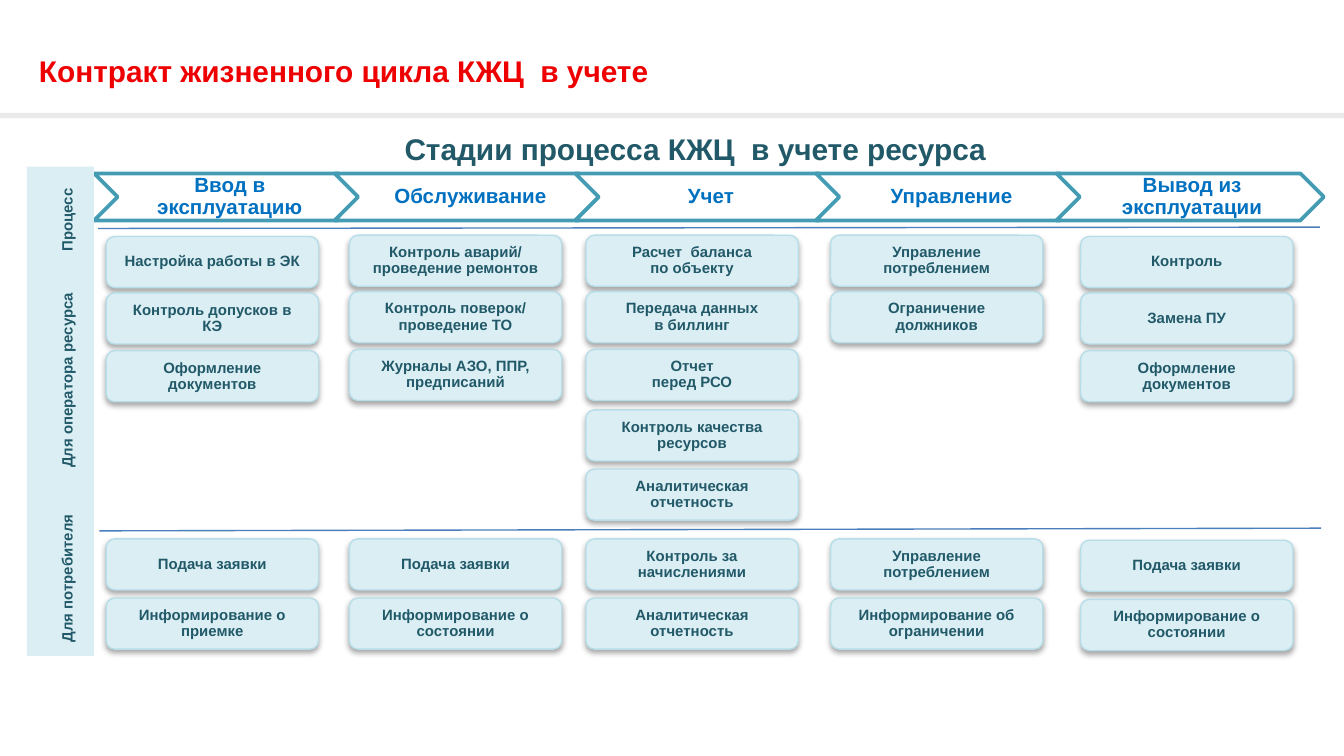
from dataclasses import dataclass

from lxml import etree
from pptx import Presentation
from pptx.dml.color import RGBColor
from pptx.enum.shapes import MSO_CONNECTOR, MSO_SHAPE
from pptx.enum.text import MSO_ANCHOR, MSO_AUTO_SIZE, PP_ALIGN
from pptx.oxml.ns import qn
from pptx.shapes.autoshape import Shape
from pptx.slide import Slide
from pptx.util import Inches, Pt

RECTANGLE = MSO_SHAPE.RECTANGLE
ROUNDED = MSO_SHAPE.ROUNDED_RECTANGLE
CHEVRON = MSO_SHAPE.CHEVRON
STRAIGHT = MSO_CONNECTOR.STRAIGHT
TOP, MIDDLE = MSO_ANCHOR.TOP, MSO_ANCHOR.MIDDLE
LEFT, CENTER = PP_ALIGN.LEFT, PP_ALIGN.CENTER


@dataclass(frozen=True)
class Theme:
    font: str = "Arial"
    title: str = "EE0000"
    stage: str = "0070C0"
    dark: str = "215968"
    pale: str = "DBEEF4"
    card_line: str = "B7DEE8"
    stage_line: str = "449CB4"
    divider: str = "4B7EBC"
    header_rule: str = "EAEAEA"
    white: str = "FFFFFF"
    heading_size: int = 16
    stage_size: int = 11
    small_size: int = 8


@dataclass(frozen=True)
class Box:
    left: float
    top: float
    width: float
    height: float

    def lengths(self) -> list[int]:
        return [Inches(value) for value in (self.left, self.top, self.width, self.height)]


@dataclass(frozen=True)
class Stage:
    name: str
    cards_left: float
    operator: tuple[str, ...]
    consumer: tuple[str, ...]
    operator_drop: float = 0
    consumer_drop: float = 0


THEME = Theme()
OPERATOR_TOPS = (1.75, 2.17, 2.6, 3.05, 3.49)
CONSUMER_TOPS = (4.01, 4.45)
CARD_WIDTH, CARD_HEIGHT = 1.58, 0.38
STAGE_LEFT, STAGE_PITCH = 0.7, 1.79
SIDEBAR_TABS = (1.3, 2.91)

STAGES = (
    Stage("Ввод в эксплуатацию", 0.79,
          ("Настройка работы в ЭК", "Контроль допусков в КЭ", "Оформление документов"),
          ("Подача заявки", "Информирование о приемке"), operator_drop=0.01),
    Stage("Обслуживание", 2.6,
          ("Контроль аварий/\nпроведение ремонтов", "Контроль поверок/ проведение ТО",
           "Журналы АЗО, ППР, предписаний"),
          ("Подача заявки", "Информирование о состоянии")),
    Stage("Учет", 4.36,
          ("Расчет  баланса\nпо объекту", "Передача данных\nв биллинг", "Отчет\nперед РСО",
           "Контроль качества ресурсов", "Аналитическая отчетность"),
          ("Контроль за начислениями", "Аналитическая отчетность")),
    Stage("Управление", 6.18,
          ("Управление потреблением", "Ограничение должников"),
          ("Управление потреблением", "Информирование об ограничении")),
    Stage("Вывод из эксплуатации", 8.04,
          ("Контроль", "Замена ПУ", "Оформление документов"),
          ("Подача заявки", "Информирование о состоянии"),
          operator_drop=0.01, consumer_drop=0.01),
)


def write_text(shape: Shape, text: str, size: int, color: str, align: PP_ALIGN = CENTER,
               anchor: MSO_ANCHOR = MIDDLE, spacing: float = 1.0) -> None:
    """Write bold text, one paragraph per line."""
    frame = shape.text_frame
    frame.word_wrap = True
    frame.auto_size = MSO_AUTO_SIZE.NONE
    frame.vertical_anchor = anchor
    for index, line in enumerate(text.split("\n")):
        paragraph = frame.add_paragraph() if index else frame.paragraphs[0]
        paragraph.alignment = align
        paragraph.line_spacing = spacing
        paragraph.space_before = Pt(0)
        run = paragraph.add_run()
        run.text = line
        run.font.name = THEME.font
        run.font.size = Pt(size)
        run.font.bold = True
        run.font.color.rgb = RGBColor.from_string(color)


def add_block(slide: Slide, kind: MSO_SHAPE, box: Box, fill: str,
              line: str | None = None, line_width: float = 0.75) -> Shape:
    shape = slide.shapes.add_shape(kind, *box.lengths())
    shape.shadow.inherit = False
    shape.fill.solid()
    shape.fill.fore_color.rgb = RGBColor.from_string(fill)
    if line is None:
        shape.line.fill.background()
    else:
        shape.line.color.rgb = RGBColor.from_string(line)
        shape.line.width = Pt(line_width)
    return shape


def add_drop_shadow(shape: Shape) -> None:
    effects = shape.element.spPr.find(qn("a:effectLst"))
    shadow = etree.SubElement(effects, qn("a:outerShdw"), blurRad=str(Pt(3.1)),
                              dist=str(Pt(1.8)), dir="5400000", rotWithShape="0")
    color = etree.SubElement(shadow, qn("a:srgbClr"), val="000000")
    etree.SubElement(color, qn("a:alpha"), val="35000")


def add_stage(slide: Slide, index: int, name: str) -> None:
    box = Box(STAGE_LEFT + index * STAGE_PITCH, 1.29, 1.99, 0.35)
    shape = add_block(slide, CHEVRON, box, THEME.white, THEME.stage_line, 2)
    frame = shape.text_frame
    frame.margin_left = Inches(0.05)
    frame.margin_top = frame.margin_right = frame.margin_bottom = Inches(0.02)
    write_text(shape, name, THEME.stage_size, THEME.stage, spacing=0.9)


def add_card(slide: Slide, left: float, top: float, text: str) -> None:
    shape = add_block(slide, ROUNDED, Box(left, top, CARD_WIDTH, CARD_HEIGHT),
                      THEME.pale, THEME.card_line)
    add_drop_shadow(shape)
    write_text(shape, text, THEME.small_size, THEME.dark, spacing=0.9)


def add_sidebar(slide: Slide) -> None:
    shape = add_block(slide, RECTANGLE, Box(0.2, 1.24, 0.5, 3.64), THEME.pale)
    frame = shape.text_frame
    frame._txBody.bodyPr.set("vert", "vert270")
    frame.margin_left = Inches(0.14)
    properties = frame.paragraphs[0]._p.get_or_add_pPr()
    tabs = etree.SubElement(properties, qn("a:tabLst"))
    for position in SIDEBAR_TABS:
        etree.SubElement(tabs, qn("a:tab"), pos=str(Inches(position)), algn="l")
    write_text(shape, "Для потребителя\tДля оператора ресурса\tПроцесс",
               THEME.small_size, THEME.dark, LEFT)


def add_divider(slide: Slide, left: float, top: float, right: float, bottom: float) -> None:
    ends = [Inches(value) for value in (left, top, right, bottom)]
    connector = slide.shapes.add_connector(STRAIGHT, *ends)
    connector.line.color.rgb = RGBColor.from_string(THEME.divider)
    connector.line.width = Pt(0.75)
    etree.SubElement(connector.element.spPr, qn("a:effectLst"))


def main() -> None:
    # Widescreen page, 16 to 9
    presentation = Presentation()
    presentation.slide_width = Inches(10)
    presentation.slide_height = Inches(10) * 9 // 16
    slide = presentation.slides.add_slide(presentation.slide_layouts[5])

    # Title and the rule under it
    title = slide.shapes.title
    title.left, title.top, title.width, title.height = Box(0.19, 0.34, 8.29, 0.37).lengths()
    write_text(title, "Контракт жизненного цикла КЖЦ  в учете",
               THEME.heading_size, THEME.title, LEFT, TOP)
    add_block(slide, RECTANGLE, Box(0, 0.84, 10, 0.04), THEME.header_rule)

    # Process stages, then the row labels over their left edge
    for index, stage in enumerate(STAGES):
        add_stage(slide, index, stage.name)
    add_sidebar(slide)

    # Operator and consumer cards below each stage
    for stage in STAGES:
        groups = ((OPERATOR_TOPS, stage.operator, stage.operator_drop),
                  (CONSUMER_TOPS, stage.consumer, stage.consumer_drop))
        for tops, cards, drop in groups:
            for top, text in zip(tops, cards):
                add_card(slide, stage.cards_left, top + drop, text)

    # Row dividers
    add_divider(slide, 0.73, 1.7, 9.82, 1.69)
    add_divider(slide, 0.74, 3.95, 9.83, 3.93)

    # Diagram heading
    heading = slide.shapes.add_textbox(*Box(1.03, 0.92, 8.29, 0.37).lengths())
    write_text(heading, "Стадии процесса КЖЦ  в учете ресурса",
               THEME.heading_size, THEME.dark, CENTER, TOP)

    presentation.save("out.pptx")


if __name__ == "__main__":
    main()
